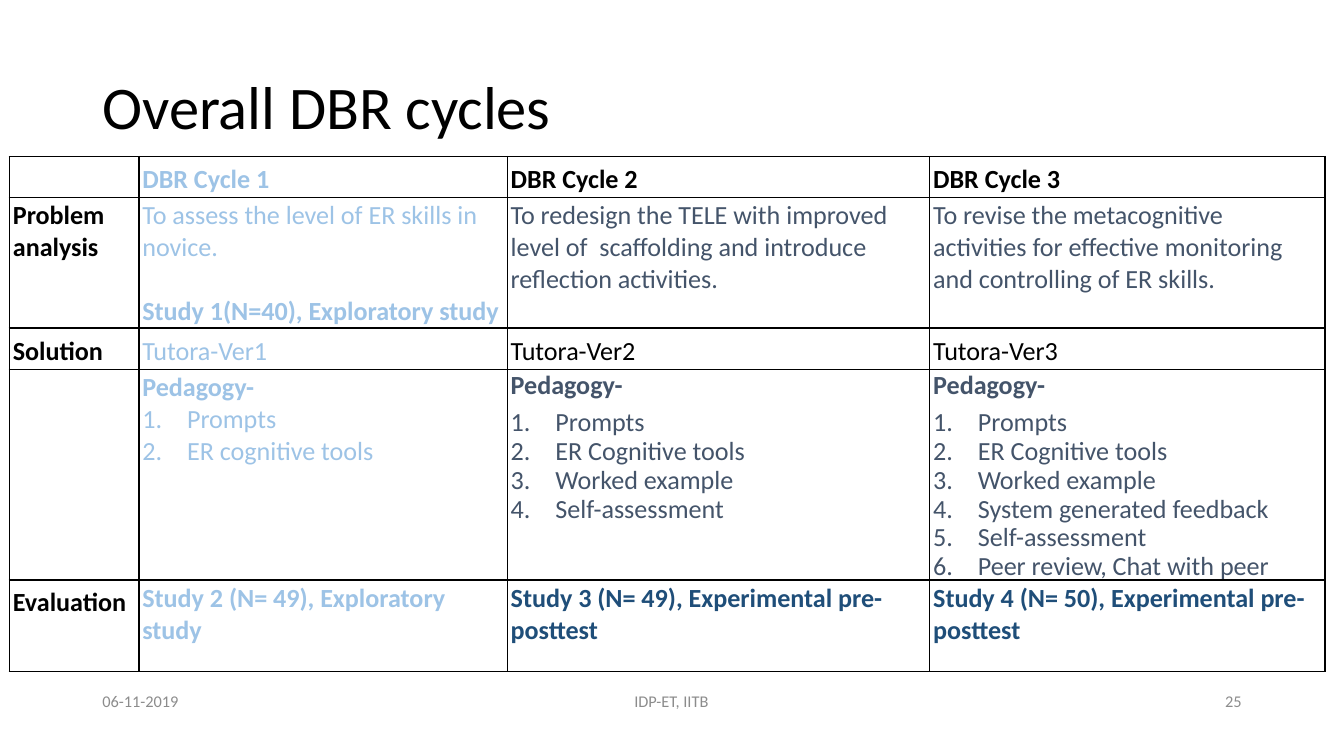
from dataclasses import dataclass

from lxml.etree import SubElement
from pptx import Presentation
from pptx.enum.text import MSO_ANCHOR, PP_ALIGN
from pptx.oxml.ns import qn
from pptx.dml.color import RGBColor
from pptx.util import Inches, Pt

COLORS = {
    "black": "000000",
    "faded": "9DC3E6",
    "slate": "44546A",
    "navy": "1F4E79",
    "footer": "8C8C8C",
}
FONT = "Calibri"
COLUMN_WIDTHS = [1.1, 3.13, 3.59, 3.36]
ROW_HEIGHTS = [0.32, 0.99, 0.35, 1.76, 0.78]
LIST_INDENT = 0.38


@dataclass
class Line:
    text: str
    color: str
    bold: bool = False
    align: PP_ALIGN = PP_ALIGN.LEFT
    spacing: float = 1.0
    before: float = 0
    after: float = 0
    numbered: bool = False


def label(text, color="black", bold=True, spacing=1.15):
    return [Line(text, color, bold, PP_ALIGN.JUSTIFY, spacing)]


def pedagogy(color, items, spacing=1.0, after=0):
    heading = Line("Pedagogy-", color, True, spacing=spacing, after=after)
    return [heading] + [Line(item, color, spacing=spacing, numbered=True) for item in items]


CYCLE_ROWS = [
    [
        [],
        label("DBR Cycle 1", "faded"),
        label("DBR Cycle 2"),
        label("DBR Cycle 3"),
    ],
    [
        label("Problem analysis", spacing=1.0),
        [
            Line("To assess the level of ER skills in novice.", "faded"),
            Line("Study 1(N=40), Exploratory study", "faded", True, before=19.5),
        ],
        [Line("To redesign the TELE with improved level of  scaffolding "
              "and introduce reflection activities.", "slate")],
        [Line("To revise the metacognitive activities for effective monitoring "
              "and controlling of ER skills.", "slate")],
    ],
    [
        label("Solution"),
        label("Tutora-Ver1", "faded", False),
        label("Tutora-Ver2", bold=False),
        label("Tutora-Ver3", bold=False),
    ],
    [
        [],
        pedagogy("faded", ["Prompts", "ER cognitive tools"]),
        pedagogy("slate", ["Prompts", "ER Cognitive tools", "Worked example",
                           "Self-assessment"], 0.9, 5),
        pedagogy("slate", ["Prompts", "ER Cognitive tools", "Worked example",
                           "System generated feedback", "Self-assessment",
                           "Peer review, Chat with peer"], 0.9, 5),
    ],
    [
        label("Evaluation"),
        [Line("Study 2 (N= 49), Exploratory study", "faded", True)],
        [Line("Study 3 (N= 49), Experimental pre-posttest", "navy", True)],
        [Line("Study 4 (N= 50), Experimental pre-posttest", "navy", True)],
    ],
]


def write_line(para, line, size):
    para.text = line.text
    para.alignment = line.align
    para.line_spacing = line.spacing
    para.space_before = Pt(line.before)
    para.space_after = Pt(line.after)
    for span in para.runs:
        span.font.name = FONT
        span.font.size = Pt(size)
        span.font.bold = line.bold
        span.font.color.rgb = RGBColor.from_string(COLORS[line.color])
    if line.numbered:
        number_paragraph(para)


def number_paragraph(para):
    properties = para._p.get_or_add_pPr()
    properties.set("marL", str(Inches(LIST_INDENT)))
    properties.set("indent", str(-Inches(LIST_INDENT)))
    SubElement(properties, qn("a:buFont"), typeface="+mj-lt")
    SubElement(properties, qn("a:buAutoNum"), type="arabicPeriod")


def add_text(page, left, top, width, height, line, size):
    box = page.shapes.add_textbox(Inches(left), Inches(top), Inches(width), Inches(height))
    frame = box.text_frame
    frame.word_wrap = True
    frame.vertical_anchor = MSO_ANCHOR.MIDDLE
    frame.margin_left = frame.margin_right = Inches(0.08)
    frame.margin_top = frame.margin_bottom = Inches(0.04)
    write_line(frame.paragraphs[0], line, size)


def add_borders(cell):
    properties = cell._tc.get_or_add_tcPr()
    for position, side in enumerate(["lnL", "lnR", "lnT", "lnB"]):
        border = SubElement(properties, qn(f"a:{side}"), w=str(Pt(1)))
        fill = SubElement(border, qn("a:solidFill"))
        SubElement(fill, qn("a:srgbClr"), val=COLORS["black"])
        properties.insert(position, border)


def fill_cell(cell, lines):
    cell.fill.background()
    cell.margin_left = cell.margin_right = Inches(0.03)
    cell.margin_top = cell.margin_bottom = Inches(0.02)
    add_borders(cell)
    frame = cell.text_frame
    for index, line in enumerate(lines):
        para = frame.add_paragraph() if index else frame.paragraphs[0]
        write_line(para, line, 16)


def add_cycle_table(page):
    frame = page.shapes.add_table(
        len(ROW_HEIGHTS), len(COLUMN_WIDTHS), Inches(0.08), Inches(1.33),
        Inches(sum(COLUMN_WIDTHS)), Inches(sum(ROW_HEIGHTS)))
    table = frame.table
    table.first_row = False
    table.horz_banding = False
    for column, width in zip(table.columns, COLUMN_WIDTHS):
        column.width = Inches(width)
    for row, height, contents in zip(table.rows, ROW_HEIGHTS, CYCLE_ROWS):
        row.height = Inches(height)
        for cell, lines in zip(row.cells, contents):
            fill_cell(cell, lines)


def add_footer(page):
    for left, width, text, align in [
        (0.79, 2.57, "06-11-2019", PP_ALIGN.LEFT),
        (3.78, 3.85, "IDP-ET, IITB", PP_ALIGN.CENTER),
        (8.06, 2.57, "25", PP_ALIGN.RIGHT),
    ]:
        add_text(page, left, 5.79, width, 0.33, Line(text, "footer", align=align), 10)


def main():
    deck = Presentation()
    deck.slide_width = Inches(11.42)
    deck.slide_height = Inches(6.25)
    page = deck.slides.add_slide(deck.slide_layouts[6])
    title = Line("Overall DBR cycles", "black", spacing=0.9)
    add_text(page, 0.79, 0.33, 9.85, 1.21, title, 37)
    add_footer(page)
    add_cycle_table(page)
    deck.save("out.pptx")


if __name__ == "__main__":
    main()
